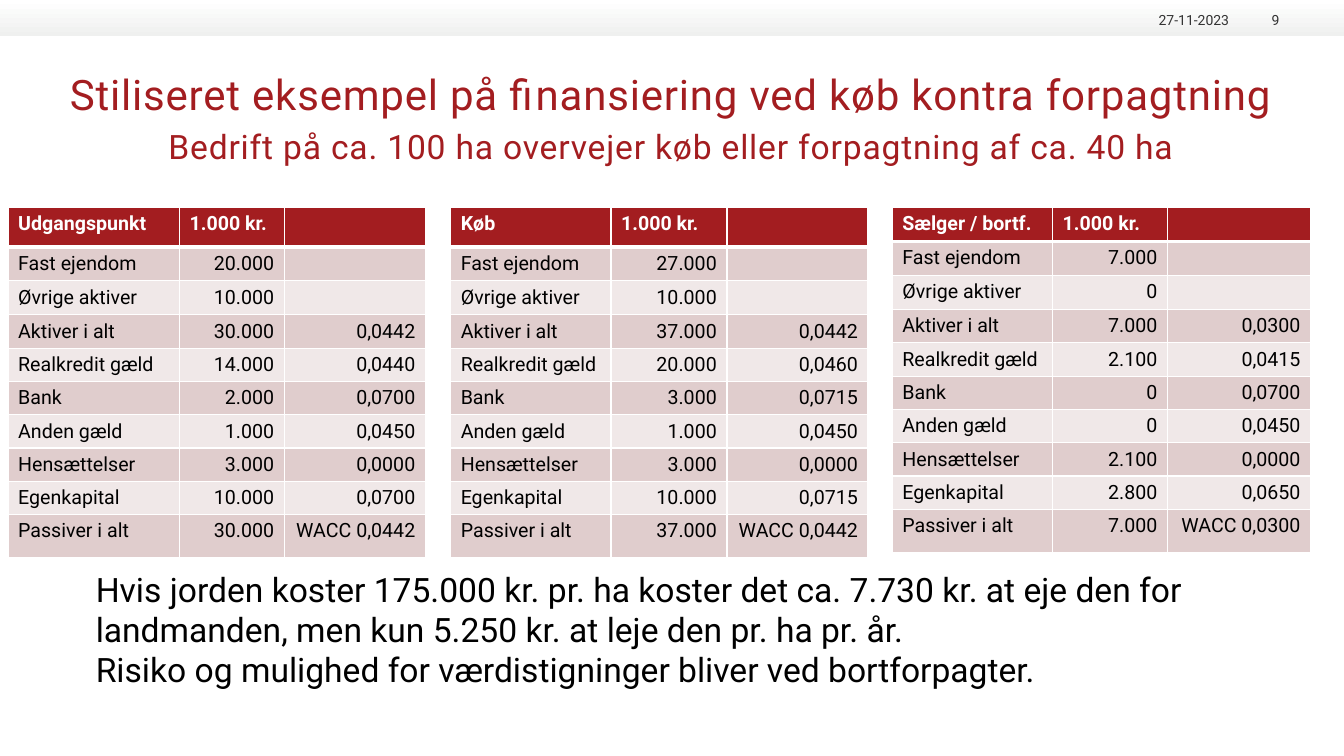
from dataclasses import dataclass

from lxml.etree import SubElement
from pptx import Presentation
from pptx.dml.color import RGBColor
from pptx.enum.shapes import MSO_SHAPE
from pptx.enum.text import MSO_ANCHOR, MSO_AUTO_SIZE, PP_ALIGN
from pptx.oxml.ns import qn
from pptx.util import Inches, Pt


@dataclass(frozen=True)
class Theme:
    font: str = "Roboto"
    red: str = "A31D20"
    black: str = "000000"
    white: str = "FFFFFF"
    footer_gray: str = "333333"
    bar_gray: str = "EFF0EF"
    bands: tuple = ("E0CDCD", "F0E8E8")
    title_size: int = 30
    large_size: int = 24
    table_size: int = 14
    footer_size: int = 10
    title_spacing: int = 60


class SlideBuilder:
    def __init__(self, slide, theme):
        self.slide = slide
        self.theme = theme

    def place(self, shape, left, top, width, height):
        shape.left, shape.top = Inches(left), Inches(top)
        shape.width, shape.height = Inches(width), Inches(height)

    def prepare_frame(self, frame, anchor):
        frame.margin_left = frame.margin_right = 0
        frame.margin_top = frame.margin_bottom = 0
        frame.word_wrap = True
        frame.auto_size = MSO_AUTO_SIZE.NONE
        frame.vertical_anchor = anchor

    def style(self, paragraph, size, color, alignment=PP_ALIGN.LEFT, bold=False):
        paragraph.alignment = alignment
        for run in paragraph.runs:
            run.font.name = self.theme.font
            run.font.size = Pt(size)
            run.font.bold = bold
            run.font.color.rgb = RGBColor.from_string(color)

    def top_bar(self, width, height):
        bar = self.slide.shapes.add_shape(
            MSO_SHAPE.RECTANGLE, 0, 0, Inches(width), Inches(height))
        bar.shadow.inherit = False
        bar.line.fill.background()
        bar.fill.gradient()
        bar.fill.gradient_angle = 270
        for stop, color in zip(bar.fill.gradient_stops,
                               (self.theme.white, self.theme.bar_gray)):
            stop.color.rgb = RGBColor.from_string(color)

    def title(self, heading, subheading, *box):
        shape = self.slide.shapes.title
        self.place(shape, *box)
        frame = shape.text_frame
        self.prepare_frame(frame, MSO_ANCHOR.TOP)
        frame.text = f"{heading}\n{subheading}"
        sizes = (self.theme.title_size, self.theme.large_size)
        for paragraph, size in zip(frame.paragraphs, sizes):
            self.style(paragraph, size, self.theme.red, PP_ALIGN.CENTER)
            for run in paragraph.runs:
                run.font._element.set("spc", str(self.theme.title_spacing))
        frame.paragraphs[1].space_before = Pt(5)

    def body(self, lines, *box):
        shape = self.slide.placeholders[1]
        self.place(shape, *box)
        frame = shape.text_frame
        self.prepare_frame(frame, MSO_ANCHOR.TOP)
        frame.text = "\n".join(lines)
        for paragraph in frame.paragraphs:
            properties = paragraph._p.get_or_add_pPr()
            properties.set("marL", "0")
            properties.set("indent", "0")
            SubElement(properties, qn("a:buNone"))
            paragraph.space_before = Pt(0)
            self.style(paragraph, self.theme.large_size, self.theme.black)

    def footer_text(self, text, *box):
        shape = self.slide.shapes.add_textbox(*map(Inches, box))
        self.prepare_frame(shape.text_frame, MSO_ANCHOR.BOTTOM)
        shape.text_frame.text = text
        self.style(shape.text_frame.paragraphs[0], self.theme.footer_size,
                   self.theme.footer_gray, PP_ALIGN.RIGHT)

    def cell_borders(self, cell, bottom_width):
        properties = cell._tc.get_or_add_tcPr()
        for side, width in (("L", 1), ("R", 1), ("T", 1), ("B", bottom_width)):
            line = SubElement(properties, qn(f"a:ln{side}"), w=str(Pt(width)))
            fill = SubElement(line, qn("a:solidFill"))
            SubElement(fill, qn("a:srgbClr"), val=self.theme.white)

    def cell(self, cell, text, row, column):
        header = row == 0
        self.cell_borders(cell, 3 if header else 1)
        cell.fill.solid()
        fill = self.theme.red if header else self.theme.bands[(row - 1) % 2]
        cell.fill.fore_color.rgb = RGBColor.from_string(fill)
        cell.text = text
        paragraph = cell.text_frame.paragraphs[0]
        alignment = PP_ALIGN.RIGHT if column and not header else PP_ALIGN.LEFT
        color = self.theme.white if header else self.theme.black
        self.style(paragraph, self.theme.table_size, color, alignment, header)
        if not text:
            # An empty cell keeps the row height of the table text
            SubElement(paragraph._p, qn("a:endParaRPr"),
                       sz=str(self.theme.table_size * 100))

    def table(self, rows, left, top, column_widths, row_heights):
        frame = self.slide.shapes.add_table(
            len(rows), len(column_widths), Inches(left), Inches(top),
            Inches(sum(column_widths)), Inches(sum(row_heights)))
        table = frame.table
        for column, width in zip(table.columns, column_widths):
            column.width = Inches(width)
        for table_row, height in zip(table.rows, row_heights):
            table_row.height = Inches(height)
        for row, texts in enumerate(rows):
            for column, text in enumerate(texts):
                self.cell(table.cell(row, column), text, row, column)


ITEMS = ("Fast ejendom", "Øvrige aktiver", "Aktiver i alt", "Realkredit gæld",
         "Bank", "Anden gæld", "Hensættelser", "Egenkapital", "Passiver i alt")

# Heading, left edge, column widths, header height, amounts, rates
BALANCES = (
    ("Udgangspunkt", 0.08, (1.7, 1.04, 1.4), 0.39,
     ("20.000", "10.000", "30.000", "14.000", "2.000", "1.000", "3.000",
      "10.000", "30.000"),
     ("", "", "0,0442", "0,0440", "0,0700", "0,0450", "0,0000", "0,0700",
      "WACC 0,0442")),
    ("Køb", 4.47, (1.59, 1.15, 1.4), 0.39,
     ("27.000", "10.000", "37.000", "20.000", "3.000", "1.000", "3.000",
      "10.000", "37.000"),
     ("", "", "0,0442", "0,0460", "0,0715", "0,0450", "0,0000", "0,0715",
      "WACC 0,0442")),
    ("Sælger / bortf.", 8.85, (1.59, 1.14, 1.42), 0.33,
     ("7.000", "0", "7.000", "2.100", "0", "0", "2.100", "2.800", "7.000"),
     ("", "", "0,0300", "0,0415", "0,0700", "0,0450", "0,0000", "0,0650",
      "WACC 0,0300")),
)


def main():
    presentation = Presentation()
    presentation.slide_width = Inches(13.33)
    presentation.slide_height = Inches(7.5)
    slide = presentation.slides.add_slide(presentation.slide_layouts[1])
    builder = SlideBuilder(slide, Theme())

    # Top bar with date and page number
    builder.top_bar(13.33, 0.36)
    builder.footer_text("27-11-2023", 11.3, 0.09, 0.89, 0.19)
    builder.footer_text("9", 12.27, 0.09, 0.42, 0.19)

    # Title
    builder.title(
        "Stiliseret eksempel på finansiering ved køb kontra forpagtning",
        "Bedrift på ca. 100 ha overvejer køb eller forpagtning af ca. 40 ha",
        0.64, 0.68, 12.04, 0.94)

    # Balance sheets
    for heading, left, widths, header_height, amounts, rates in BALANCES:
        rows = [(heading, "1.000 kr.", ""), *zip(ITEMS, amounts, rates)]
        heights = [header_height] + [0.33] * (len(ITEMS) - 1) + [0.43]
        builder.table(rows, left, 2.06, widths, heights)

    # Conclusion
    builder.body(
        ("Hvis jorden koster 175.000 kr. pr. ha koster det ca. 7.730 kr. at eje "
         "den for landmanden, men kun 5.250 kr. at leje den pr. ha pr. år.",
         "Risiko og mulighed for værdistigninger bliver ved bortforpagter."),
        0.95, 5.64, 11.17, 1.21)

    presentation.save("out.pptx")


if __name__ == "__main__":
    main()
